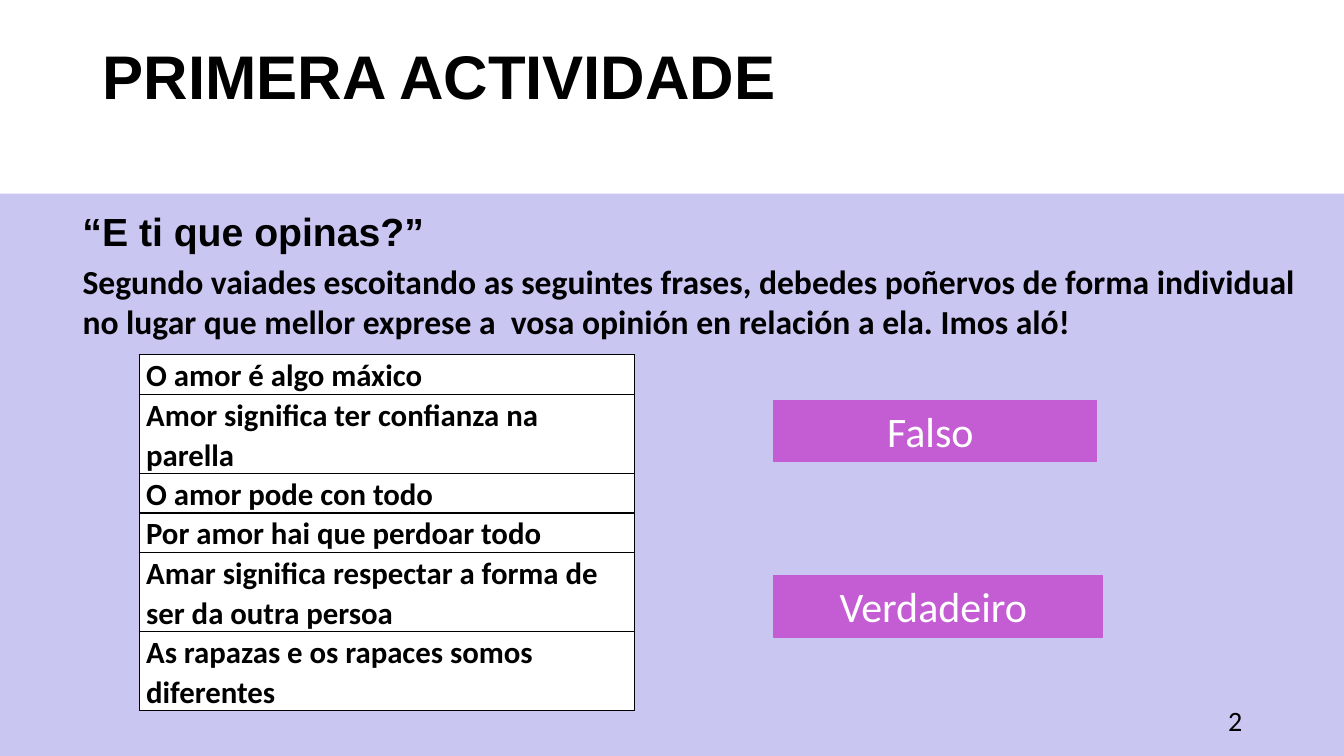
from lxml.etree import SubElement
from pptx import Presentation
from pptx.dml.color import RGBColor
from pptx.enum.shapes import MSO_SHAPE
from pptx.enum.text import MSO_ANCHOR, PP_ALIGN
from pptx.oxml.ns import qn
from pptx.util import Inches, Pt

BLACK, WHITE = "000000", "FFFFFF"
LAVENDER, ORCHID = "CAC6F2", "C45CD3"
PHRASES = [
    "O amor é algo máxico",
    "Amor significa ter confianza na parella",
    "O amor pode con todo",
    "Por amor hai que perdoar todo",
    "Amar significa respectar a forma de ser da outra persoa",
    "As rapazas e os rapaces somos diferentes",
]


def rgb(value):
    """Turn a hex string into a colour."""
    return RGBColor.from_string(value)


def add_run(p, text, size, font="Calibri", color=BLACK, bold=False):
    """Add one formatted run to a paragraph."""
    r = p.add_run()
    r.text = text
    r.font.size, r.font.name, r.font.bold = Pt(size), font, bold
    r.font.color.rgb = rgb(color)


def add_text(s, box, text, size, font="Calibri", bold=True,
             align=PP_ALIGN.LEFT, anchor=MSO_ANCHOR.TOP, spacing=1.0):
    """Place a wrapping text box."""
    tf = s.shapes.add_textbox(*map(Inches, box)).text_frame
    tf.word_wrap, tf.vertical_anchor = True, anchor
    p = tf.paragraphs[0]
    p.alignment, p.line_spacing = align, spacing
    add_run(p, text, size, font, bold=bold)


def add_rect(s, box, color, lined=False):
    """Place a filled rectangle, with a line of its own colour if asked."""
    sp = s.shapes.add_shape(MSO_SHAPE.RECTANGLE, *map(Inches, box))
    sp.shadow.inherit = False
    sp.fill.solid()
    sp.fill.fore_color.rgb = rgb(color)
    if lined:
        sp.line.color.rgb, sp.line.width = rgb(color), Pt(0.75)
    else:
        sp.line.fill.background()
    return sp


def add_answer(s, box, text):
    """Place an answer label."""
    tf = add_rect(s, box, ORCHID, lined=True).text_frame
    tf.word_wrap, tf.vertical_anchor = True, MSO_ANCHOR.TOP
    p = tf.paragraphs[0]
    p.alignment = PP_ALIGN.CENTER
    add_run(p, text, 30, color=WHITE)


def add_borders(cell):
    """Draw a thin black line on every side of a cell."""
    tc_pr = cell._tc.get_or_add_tcPr()
    for i, side in enumerate(("a:lnL", "a:lnR", "a:lnT", "a:lnB")):
        ln = SubElement(tc_pr, qn(side), w=str(Pt(1)))
        fill = SubElement(ln, qn("a:solidFill"))
        SubElement(fill, qn("a:srgbClr"), val=BLACK)
        tc_pr.insert(i, ln)


def add_phrases(s, box, phrases):
    """Place the one-column table of phrases."""
    table = s.shapes.add_table(len(phrases), 1, *map(Inches, box)).table
    table.first_row = table.horz_banding = False
    for row, phrase in zip(table.rows, phrases):
        cell = row.cells[0]
        cell.fill.solid()
        cell.fill.fore_color.rgb = rgb(WHITE)
        cell.vertical_anchor = MSO_ANCHOR.MIDDLE
        cell.margin_left = cell.margin_right = Inches(0.07)
        cell.margin_top = cell.margin_bottom = 0
        p = cell.text_frame.paragraphs[0]
        p.line_spacing, p.space_after = 1.07, Pt(8)
        add_run(p, phrase, 22, bold=True)
        add_borders(cell)


def add_header(s, box):
    """Place the title in the white band."""
    x, y, w, h = box
    add_text(s, (x + 0.92, y + 0.25, w - 1.83, 1.07), "PRIMERA ACTIVIDADE", 44,
             "Arial", anchor=MSO_ANCHOR.MIDDLE, spacing=0.9)


def add_activity(s, box):
    """Place the activity on its lavender panel."""
    x, y, w, h = box
    add_rect(s, box, LAVENDER)
    add_text(s, (x + 0.72, y + 0.09, 6.67, 0.57), "“E ti que opinas?”", 28, "Arial")
    add_text(s, (x + 0.72, y + 0.62, w - 0.92, 0.91),
             "Segundo vaiades escoitando as seguintes frases, debedes poñervos "
             "de forma individual no lugar que mellor exprese a  vosa opinión "
             "en relación a ela. Imos aló!", 24)
    add_phrases(s, (x + 1.38, y + 1.6, 4.91, 0.35 * len(PHRASES)), PHRASES)
    add_answer(s, (x + 7.67, y + 2.05, 3.21, 0.61), "Falso ")
    add_answer(s, (x + 7.67, y + 3.79, 3.27, 0.61), "Verdadeiro ")
    add_text(s, (x + 9.42, y + 5.03, 3, 0.4), "2", 20, bold=False,
             align=PP_ALIGN.RIGHT, anchor=MSO_ANCHOR.MIDDLE)


def main():
    """Build and save the slide."""
    prs = Presentation()
    prs.slide_width, prs.slide_height = Inches(13.33), Inches(7.5)
    s = prs.slides.add_slide(prs.slide_layouts[6])
    add_header(s, (0, 0, 13.33, 1.92))
    add_activity(s, (0, 1.92, 13.33, 5.58))
    prs.save("out.pptx")


if __name__ == "__main__":
    main()
